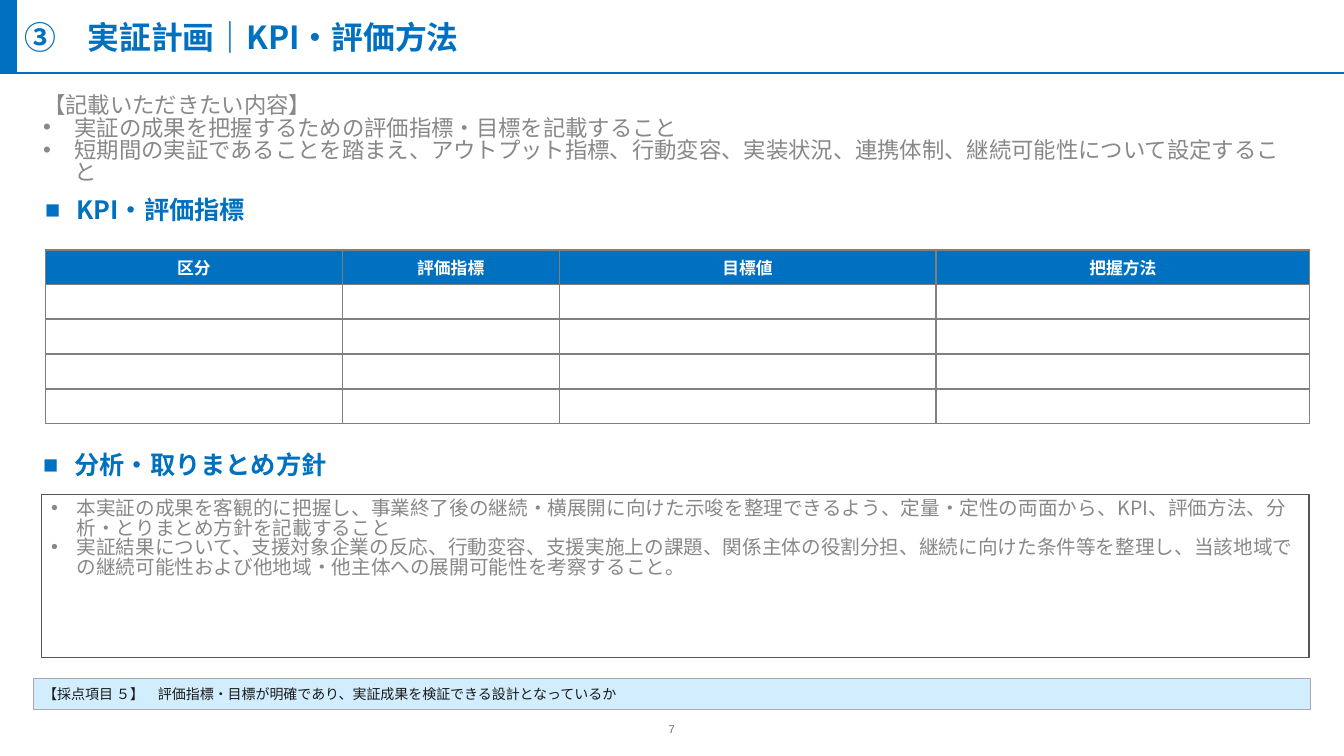
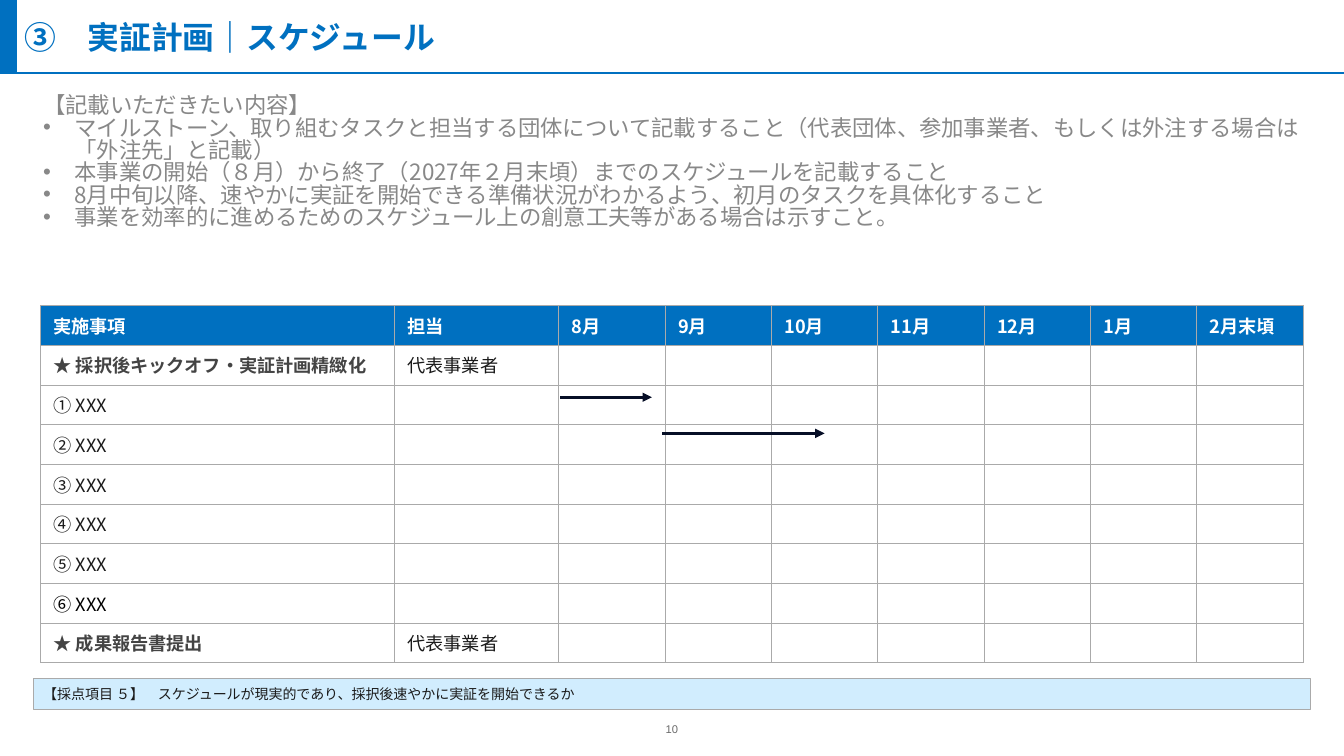
from lxml import etree
from pptx import Presentation
from pptx.dml.color import RGBColor
from pptx.enum.shapes import MSO_CONNECTOR, MSO_SHAPE
from pptx.enum.text import MSO_ANCHOR, PP_ALIGN
from pptx.oxml.ns import qn
from pptx.util import Cm, Pt

RECT, STRAIGHT = MSO_SHAPE.RECTANGLE, MSO_CONNECTOR.STRAIGHT
TOP, MIDDLE = MSO_ANCHOR.TOP, MSO_ANCHOR.MIDDLE
LEFT, CENTER = PP_ALIGN.LEFT, PP_ALIGN.CENTER

# Shared style
FONT, LATIN = "Noto Sans CJK JP", "Arial"
BLUE, WHITE, PALE_BLUE = "0070C0", "FFFFFF", "D1EDFE"
HINT, INK, STRONG, BLACK = "888888", "1A1A1A", "444444", "000000"
PAGE_GREY, GRID, DARK_GRID, FRAME = "6B6B6B", "AAAAAA", "808080", "555555"
ARROW = "060E26"
SLIDE_W, SLIDE_H, HEAD_H = 33.87, 19.05, 1.85
TIGHT = 0.83  # line spacing of running text
INSET = (0.25, 0.13, 0.25, 0.13)

# Content: evaluation slide
KPI = {
    "title": "③　実証計画｜KPI・評価方法",
    "hints": [
        "実証の成果を把握するための評価指標・目標を記載すること",
        "短期間の実証であることを踏まえ、アウトプット指標、行動変容、実装状況、"
        "連携体制、継続可能性について設定すること",
    ],
    "criterion": "評価指標・目標が明確であり、実証成果を検証できる設計となっているか",
    "page": "7",
}
KPI_HEADINGS = [("KPI・評価指標", 1.14, 4.9), ("分析・取りまとめ方針", 1.09, 11.33)]
KPI_COLUMNS = [("区分", 7.49), ("評価指標", 5.46), ("目標値", 9.5), ("把握方法", 9.42)]
KPI_BLANK_ROWS = 4
POLICY = [
    "本実証の成果を客観的に把握し、事業終了後の継続・横展開に向けた示唆を整理できるよう、"
    "定量・定性の両面から、KPI、評価方法、分析・とりまとめ方針を記載すること",
    "実証結果について、支援対象企業の反応、行動変容、支援実施上の課題、関係主体の役割分担、"
    "継続に向けた条件等を整理し、当該地域での継続可能性および他地域・他主体への"
    "展開可能性を考察すること。",
]

# Content: schedule slide
SCHEDULE = {
    "title": "③　実証計画｜スケジュール",
    "hints": [
        "マイルストーン、取り組むタスクと担当する団体について記載すること"
        "（代表団体、参加事業者、もしくは外注する場合は「外注先」と記載）",
        "本事業の開始（８月）から終了（2027年２月末頃）までのスケジュールを記載すること",
        "8月中旬以降、速やかに実証を開始できる準備状況がわかるよう、初月のタスクを具体化すること",
        "事業を効率的に進めるためのスケジュール上の創意工夫等がある場合は示すこと。",
    ],
    "criterion": "スケジュールが現実的であり、採択後速やかに実証を開始できるか",
    "page": "10",
}
MONTHS = ["8月", "9月", "10月", "11月", "12月", "1月", "2月末頃"]
SCHEDULE_COLUMNS = [("実施事項", 8.92), ("担当", 4.14)] + [(m, 2.68) for m in MONTHS]
OWNER = "代表事業者"
TASKS = [("★ 採択後キックオフ・実証計画精緻化", OWNER)]
TASKS += [(f"{number} XXX", "") for number in "①②③④⑤⑥"]
TASKS += [("★ 成果報告書提出", OWNER)]
PERIODS = [(14.12, 16.43, 10.01), (16.69, 20.78, 10.92)]  # start, end, height


def rgb(value):
    return RGBColor.from_string(value)


def set_insets(target, insets):
    (target.margin_left, target.margin_top,
     target.margin_right, target.margin_bottom) = map(Cm, insets)


def write(paragraph, text, size, color, bold=False, align=LEFT, font=FONT,
          bullet=None, indent=0.79, spacing=None):
    paragraph.alignment = align
    if spacing:
        paragraph.line_spacing = spacing
    if bullet:
        props = paragraph._p.get_or_add_pPr()
        props.set("marL", str(Cm(indent)))
        props.set("indent", str(-Cm(indent)))
        etree.SubElement(props, qn("a:buFont"), typeface=LATIN)
        etree.SubElement(props, qn("a:buChar"), char=bullet)
    run = paragraph.add_run()
    run.text = text
    run.font.size, run.font.bold, run.font.name = Pt(size), bold, font
    run.font.color.rgb = rgb(color)
    etree.SubElement(run._r.get_or_add_rPr(), qn("a:ea"), typeface=FONT)


def frame(shape, insets=INSET, anchor=TOP):
    box = shape.text_frame
    box.word_wrap, box.vertical_anchor = True, anchor
    set_insets(box, insets)
    return box


def text_box(slide, area, text, anchor=TOP, insets=(0, 0, 0, 0), **style):
    box = frame(slide.shapes.add_textbox(*map(Cm, area)), insets, anchor)
    write(box.paragraphs[0], text, **style)


def panel(slide, area, fill, line=None, width=0.5):
    shape = slide.shapes.add_shape(RECT, *map(Cm, area))
    shape.shadow.inherit = False
    shape.fill.solid()
    shape.fill.fore_color.rgb = rgb(fill)
    if line:
        shape.line.color.rgb = rgb(line)
        shape.line.width = Pt(width)
    else:
        shape.line.fill.background()
    return shape


def rule(slide, start, end, color, width, arrow=False):
    line = slide.shapes.add_connector(STRAIGHT, *map(Cm, start + end))
    line.line.color.rgb = rgb(color)
    line.line.width = Pt(width)
    if arrow:
        etree.SubElement(line.line._get_or_add_ln(), qn("a:tailEnd"), type="triangle")
    etree.SubElement(line._element.spPr, qn("a:effectLst"))


def style_cell(cell, fill, border, width):
    props = cell._tc.get_or_add_tcPr()
    for side in ("a:lnL", "a:lnR", "a:lnT", "a:lnB"):
        edge = etree.SubElement(props, qn(side), w=str(Pt(width)))
        solid = etree.SubElement(edge, qn("a:solidFill"))
        etree.SubElement(solid, qn("a:srgbClr"), val=border)
    cell.fill.solid()
    cell.fill.fore_color.rgb = rgb(fill)
    cell.vertical_anchor = MIDDLE


def grid(slide, left, top, columns, heights, border, width, insets):
    """Draw an empty ruled table with a blue header row."""
    widths = [w for _, w in columns]
    table = slide.shapes.add_table(len(heights), len(columns), Cm(left), Cm(top),
                                   Cm(sum(widths)), Cm(sum(heights))).table
    for column, w in zip(table.columns, widths):
        column.width = Cm(w)
    for i, (row, height) in enumerate(zip(table.rows, heights)):
        row.height = Cm(height)
        for cell in row.cells:
            style_cell(cell, WHITE if i else BLUE, border, width)
            set_insets(cell, insets)
    return table


def base_slide(deck, content):
    """Add a slide with title band, hints, criterion strip and page number."""
    slide = deck.slides.add_slide(deck.slide_layouts[6])
    panel(slide, (0, 0, 0.41, HEAD_H), BLUE, BLUE, 1)
    text_box(slide, (0.61, 0.1, 32.18, 1.63), content["title"], MIDDLE,
             size=22.7, color=BLUE, bold=True)
    rule(slide, (0, HEAD_H), (SLIDE_W, HEAD_H), BLUE, 1.5)

    hints = frame(panel(slide, (0.84, 2.29, 32.18, 2.82), WHITE))
    write(hints.paragraphs[0], "【記載いただきたい内容】", 16, HINT, spacing=TIGHT)
    for hint in content["hints"]:
        write(hints.add_paragraph(), hint, 16, HINT, bullet="•", spacing=TIGHT)

    strip = frame(panel(slide, (0.84, 17.09, 32.18, 0.79), PALE_BLUE, GRID), anchor=MIDDLE)
    write(strip.paragraphs[0], "【採点項目 ５】　" + content["criterion"], 10, INK)
    text_box(slide, (16.51, 18.24, 0.84, 0.25), content["page"], MIDDLE,
             size=8, color=PAGE_GREY, align=CENTER, font=LATIN)
    return slide


def kpi_slide(deck):
    slide = base_slide(deck, KPI)
    for heading, left, top in KPI_HEADINGS:
        text_box(slide, (left, top, 9.91, 0.61), heading, insets=(0, 0.13, 0, 0.13),
                 size=18, color=BLUE, bold=True, bullet="■", spacing=TIGHT)

    # Indicator table
    table = grid(slide, 1.14, 6.3, KPI_COLUMNS, [0.86] + [0.88] * KPI_BLANK_ROWS,
                 DARK_GRID, 1, (0.25, 0.03, 0.25, 0.03))
    for cell, (name, _) in zip(table.rows[0].cells, KPI_COLUMNS):
        write(cell.text_frame.paragraphs[0], name, 12, WHITE, True, CENTER, LATIN)

    # Analysis policy
    policy = frame(panel(slide, (1.04, 12.47, 31.95, 4.09), WHITE, FRAME, 0.75))
    for i, text in enumerate(POLICY):
        paragraph = policy.add_paragraph() if i else policy.paragraphs[0]
        write(paragraph, text, 14, HINT, bullet="•", indent=0.64, spacing=TIGHT)


def schedule_slide(deck):
    slide = base_slide(deck, SCHEDULE)
    table = grid(slide, 1.02, 7.7, SCHEDULE_COLUMNS, [1.0] * (len(TASKS) + 1),
                 GRID, 0.5, (0.33, 0.05, 0.33, 0.05))
    for cell, (name, _) in zip(table.rows[0].cells, SCHEDULE_COLUMNS):
        write(cell.text_frame.paragraphs[0], name, 13, WHITE, True)
    for i, (task, owner) in enumerate(TASKS, 1):
        milestone = task.startswith("★")
        color = STRONG if milestone else BLACK if task.startswith("⑥") else INK
        write(table.cell(i, 0).text_frame.paragraphs[0], task, 13, color, milestone)
        if owner:
            write(table.cell(i, 1).text_frame.paragraphs[0], owner, 13, INK)

    # Task periods
    for start, end, y in PERIODS:
        rule(slide, (start, y), (end, y), ARROW, 2.25, arrow=True)


def main():
    deck = Presentation()
    deck.slide_width, deck.slide_height = Cm(SLIDE_W), Cm(SLIDE_H)
    kpi_slide(deck)
    schedule_slide(deck)
    deck.save("out.pptx")


if __name__ == "__main__":
    main()
